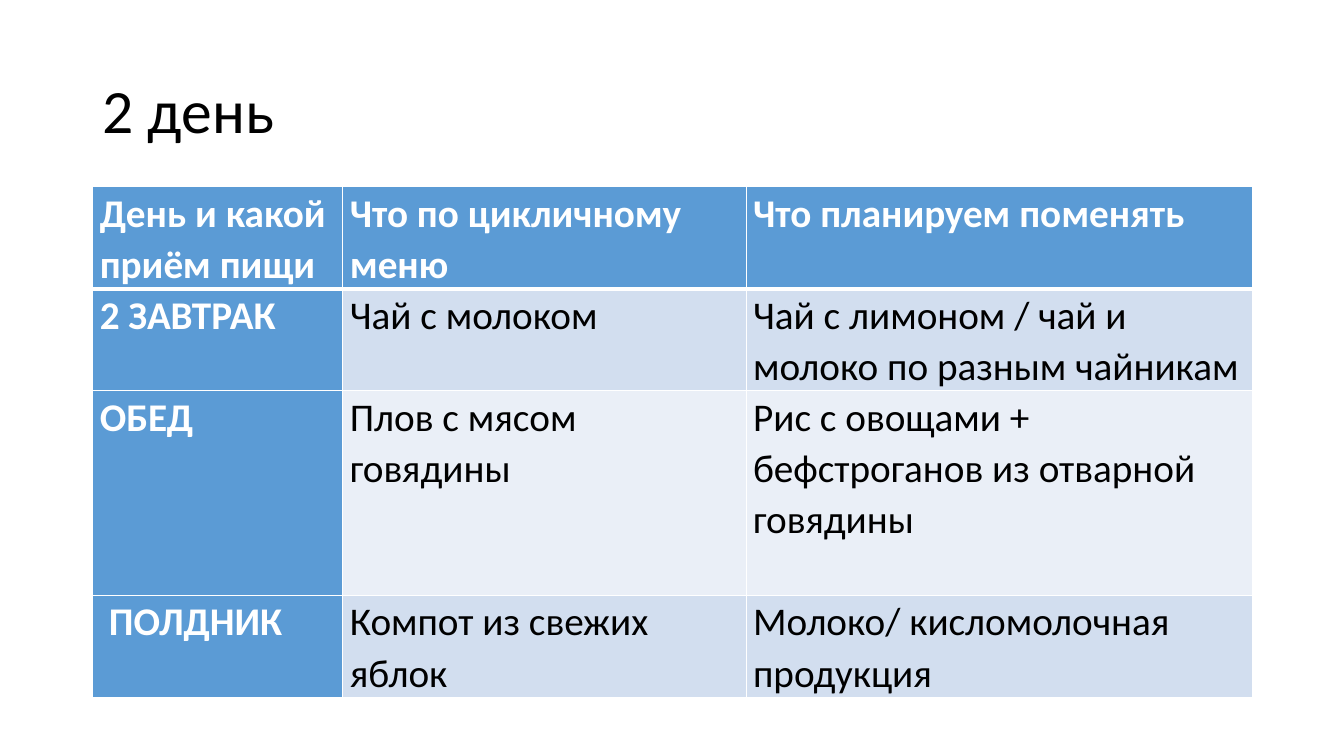
"""Build the menu-change slide for day 2."""
from dataclasses import dataclass

from lxml.etree import SubElement
from pptx import Presentation
from pptx.dml.color import RGBColor
from pptx.enum.text import MSO_ANCHOR
from pptx.oxml.ns import qn
from pptx.util import Inches, Pt

TITLE = "2 день"
MENU = [
    ("День и какой приём пищи", "Что по цикличному меню", "Что планируем поменять"),
    ("2 ЗАВТРАК", "Чай с молоком", "Чай с лимоном / чай и молоко по разным чайникам"),
    ("ОБЕД", "Плов с мясом говядины", "Рис с овощами + бефстроганов из отварной говядины"),
    ("ПОЛДНИК", "Компот из свежих яблок", "Молоко/ кисломолочная продукция"),
]
COLUMN_WIDTHS = (2.48, 4, 5.02)
ROW_LINES = (2, 2, 4, 2)
LINE_HEIGHT = 0.507
LEFT, TITLE_TOP, TITLE_HEIGHT = 0.92, 0.4, 1.45
CELL_INSET, SNACK_INDENT = 0.07, 0.09


@dataclass(frozen=True)
class Theme:
    font: str = "Calibri"
    title_size: int = 44
    cell_size: int = 28
    dark: str = "000000"
    light: str = "FFFFFF"
    accent: str = "5B9BD5"
    bands: tuple = ("EAEFF7", "D2DEEF")
    thin: int = 1
    thick: int = 3


THEME = Theme()


def write_text(frame, text, size, color, bold, spacing):
    frame.word_wrap = True
    paragraph = frame.paragraphs[0]
    paragraph.line_spacing = spacing
    run = paragraph.add_run()
    run.text = text
    values = {"name": THEME.font, "size": Pt(size), "bold": bold}
    for name, value in values.items():
        setattr(run.font, name, value)
    run.font.color.rgb = RGBColor.from_string(color)


def add_borders(cell, row):
    widths = {"lnL": THEME.thin, "lnR": THEME.thin,
              "lnT": THEME.thick if row == 1 else THEME.thin,
              "lnB": THEME.thick if row == 0 else THEME.thin}
    properties = cell._tc.get_or_add_tcPr()
    for position, (side, width) in enumerate(widths.items()):
        line = SubElement(properties, qn(f"a:{side}"), w=str(Pt(width)))
        fill = SubElement(line, qn("a:solidFill"))
        SubElement(fill, qn("a:srgbClr"), val=THEME.light)
        properties.insert(position, line)


def add_title(slide):
    box = slide.shapes.add_textbox(
        *map(Inches, (LEFT, TITLE_TOP, sum(COLUMN_WIDTHS), TITLE_HEIGHT)))
    box.text_frame.vertical_anchor = MSO_ANCHOR.MIDDLE
    write_text(box.text_frame, TITLE, THEME.title_size, THEME.dark, False, 0.9)


def fill_cell(cell, text, row, column):
    heading = row == 0 or column == 0
    indent = SNACK_INDENT if (row, column) == (len(MENU) - 1, 0) else 0
    margins = {"margin_left": CELL_INSET + indent, "margin_right": CELL_INSET,
               "margin_top": 0, "margin_bottom": 0}
    for name, value in margins.items():
        setattr(cell, name, Inches(value))
    cell.fill.solid()
    cell.fill.fore_color.rgb = RGBColor.from_string(
        THEME.accent if heading else THEME.bands[row % 2])
    write_text(cell.text_frame, text, THEME.cell_size,
               THEME.light if heading else THEME.dark, heading, 1.07)
    add_borders(cell, row)


def add_menu(slide):
    frame = slide.shapes.add_table(
        len(MENU), len(COLUMN_WIDTHS),
        *map(Inches, (LEFT, TITLE_TOP + TITLE_HEIGHT, sum(COLUMN_WIDTHS),
                      sum(ROW_LINES) * LINE_HEIGHT)))
    table = frame.table
    for column, width in zip(table.columns, COLUMN_WIDTHS):
        column.width = Inches(width)
    for row, lines in zip(table.rows, ROW_LINES):
        row.height = Inches(lines * LINE_HEIGHT)
    for row, texts in enumerate(MENU):
        for column, text in enumerate(texts):
            fill_cell(table.cell(row, column), text, row, column)


def main():
    presentation = Presentation()
    presentation.slide_width, presentation.slide_height = Inches(13.33), Inches(7.5)
    slide = presentation.slides.add_slide(presentation.slide_layouts[6])
    add_title(slide)
    add_menu(slide)
    presentation.save("out.pptx")


if __name__ == "__main__":
    main()
